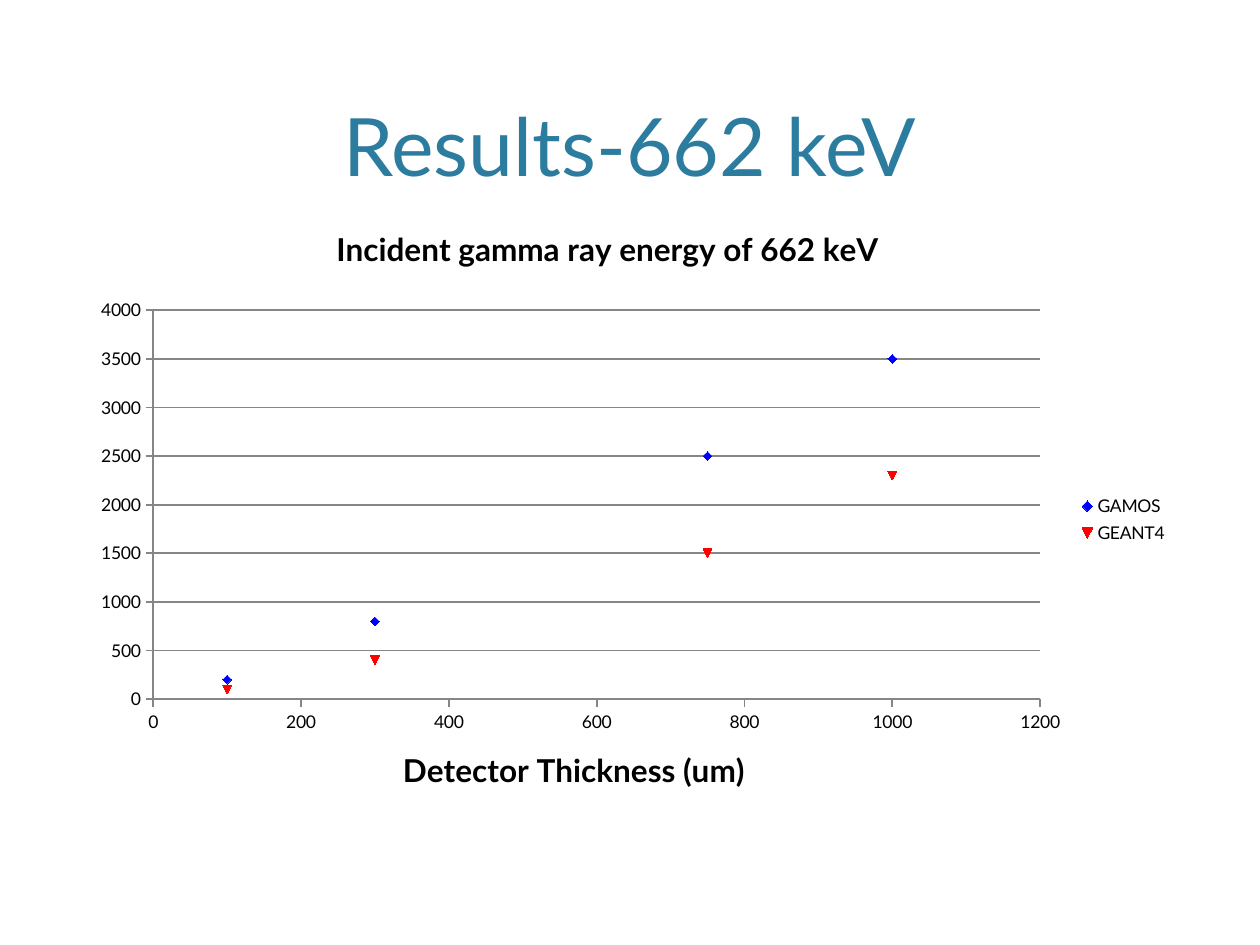
import pptx
import pptx.chart.data
import pptx.dml.color
import pptx.enum.chart
import pptx.enum.text
import pptx.oxml
import pptx.oxml.ns
import pptx.util

Inches = pptx.util.Inches
Pt = pptx.util.Pt
RGBColor = pptx.dml.color.RGBColor

FONT = "Lato"
TEAL = RGBColor(0x2C, 0x7C, 0x9F)
BLACK = RGBColor(0, 0, 0)
GREY = RGBColor(0x86, 0x86, 0x86)
BLUE = RGBColor(0, 0, 0xFF)
RED = RGBColor(0xFF, 0, 0)

THICKNESSES = (100, 300, 750, 1000)
SERIES = (
    ("GAMOS", BLUE, (200, 800, 2500, 3500)),
    ("GEANT4", RED, (100, 400, 1500, 2300)),
)


def style_font(font, size, color, bold=False):
    font.name = FONT
    font.size = Pt(size)
    font.bold = bold
    font.color.rgb = color


def set_layout(parent, position, **fractions):
    """Place a chart part by fractions of the chart's width and height."""
    for old in parent.findall(pptx.oxml.ns.qn("c:layout")):
        parent.remove(old)
    target = '<c:layoutTarget val="inner"/>' if position == 0 else ""
    modes = '<c:xMode val="edge"/><c:yMode val="edge"/>'
    values = "".join(f'<c:{key} val="{value}"/>' for key, value in fractions.items())
    layout = pptx.oxml.parse_xml(
        f'<c:layout {pptx.oxml.ns.nsdecls("c")}><c:manualLayout>'
        f"{target}{modes}{values}</c:manualLayout></c:layout>")
    parent.insert(position, layout)


def write_chart_title(title, text, x, y):
    span = title.text_frame.paragraphs[0].add_run()
    span.text = text
    style_font(span.font, 18, BLACK, bold=True)
    set_layout(title._element, 1, x=x, y=y)


def add_heading(page, left, top, width, height):
    box = page.shapes.add_textbox(left, top, width, height)
    frame = box.text_frame
    frame.word_wrap = True
    frame.vertical_anchor = pptx.enum.text.MSO_ANCHOR.BOTTOM
    para = frame.paragraphs[0]
    para.alignment = pptx.enum.text.PP_ALIGN.CENTER
    span = para.add_run()
    span.text = "Results-662 keV"
    style_font(span.font, 46, TEAL)


def style_axis(axis, maximum, step, gridlines):
    axis.minimum_scale = 0
    axis.maximum_scale = maximum
    axis.major_unit = step
    axis.major_tick_mark = pptx.enum.chart.XL_TICK_MARK.OUTSIDE
    axis.has_major_gridlines = gridlines
    lines = [axis.format.line]
    if gridlines:
        lines.append(axis.major_gridlines.format.line)
    for line in lines:
        line.color.rgb = GREY
        line.width = Pt(1)


def add_scatter(page, left, top, width, height):
    data = pptx.chart.data.XyChartData()
    for name, _, counts in SERIES:
        series = data.add_series(name)
        for thickness, count in zip(THICKNESSES, counts):
            series.add_data_point(thickness, count)
    chart = page.shapes.add_chart(
        pptx.enum.chart.XL_CHART_TYPE.XY_SCATTER, left, top, width, height, data).chart
    style_font(chart.font, 10, BLACK)

    # Titles and axes
    chart.has_title = True
    write_chart_title(chart.chart_title, "Incident gamma ray energy of 662 keV", 0.23, 0)
    style_axis(chart.category_axis, 1200, 200, False)
    style_axis(chart.value_axis, 4000, 500, True)
    write_chart_title(chart.category_axis.axis_title, "Detector Thickness (um)", 0.29, 0.87)

    # Markers only, no joining lines
    plot = chart.plots[0]
    plot.vary_by_categories = False
    for series, (_, color, _) in zip(plot.series, SERIES):
        series.smooth = False
        series.format.line.fill.background()
        marker = series.marker
        marker.style = pptx.enum.chart.XL_MARKER_STYLE.AUTOMATIC
        marker.size = 5
        marker.format.fill.solid()
        marker.format.fill.fore_color.rgb = color
        marker.format.line.color.rgb = color

    # Legend and plot area
    chart.has_legend = True
    chart.legend.position = pptx.enum.chart.XL_LEGEND_POSITION.RIGHT
    chart.legend.include_in_layout = False
    set_layout(chart.legend._element, 1, x=0.9, y=0.45, w=0.09, h=0.1)
    plot_area = chart._chartSpace.chart.plotArea
    set_layout(plot_area, 0, x=0.07, y=0.15, w=0.8, h=0.65)


def main():
    deck = pptx.Presentation()
    deck.slide_width = Inches(10)
    deck.slide_height = Inches(7.5)
    page = deck.slides.add_slide(deck.slide_layouts[6])
    add_heading(page, Inches(0.6), Inches(0.12), Inches(8.8), Inches(1.46))
    add_scatter(page, Inches(0.6), Inches(1.75), Inches(8.8), Inches(4.75))
    deck.save("out.pptx")


if __name__ == "__main__":
    main()
